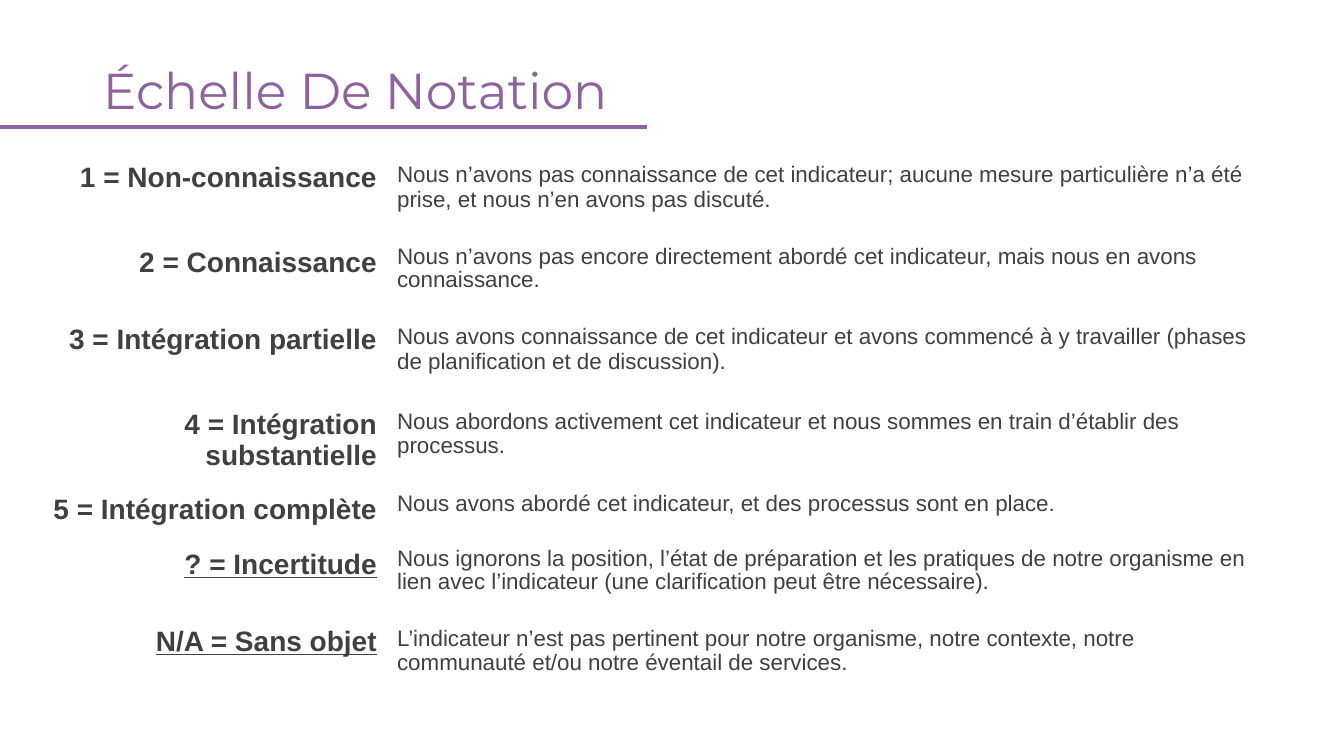
from lxml import etree
from pptx import Presentation
from pptx.dml.color import RGBColor
from pptx.enum.shapes import MSO_CONNECTOR as Connector
from pptx.enum.text import MSO_ANCHOR as Anchor, PP_ALIGN as Align
from pptx.oxml.ns import qn
from pptx.util import Pt

PX = 914400 / 100.8
COLOURS = {"purple": "8F629E", "text": "404040"}
SCALE = [
    (85, "1 = Non-connaissance", False, None,
     "Nous n’avons pas connaissance de cet indicateur; aucune mesure particulière n’a été prise, et nous n’en avons pas discuté."),
    (77, "2 = Connaissance", False, 0.9,
     "Nous n’avons pas encore directement abordé cet indicateur, mais nous en avons connaissance."),
    (85, "3 = Intégration partielle", False, None,
     "Nous avons connaissance de cet indicateur et avons commencé à y travailler (phases de planification et de discussion)."),
    (85, "4 = Intégration substantielle", False, None,
     "Nous abordons activement cet indicateur et nous sommes en train d’établir des processus."),
    (55, "5 = Intégration complète", False, 0.9,
     "Nous avons abordé cet indicateur, et des processus sont en place."),
    (77, "? = Incertitude", True, 0.9,
     "Nous ignorons la position, l’état de préparation et les pratiques de notre organisme en lien avec l’indicateur (une clarification peut être nécessaire)."),
    (85, "N/A = Sans objet", True, None,
     "L’indicateur n’est pas pertinent pour notre organisme, notre contexte, notre communauté et/ou notre éventail de services."),
]


def px(length):
    return round(length * PX)


class SlideBuilder:
    def __init__(self, slide):
        self.slide = slide

    def add_text(self, frame, text, size, colour="text", font="Arial",
                 bold=False, underline=False, align=Align.LEFT, spacing=None):
        paragraph = frame.paragraphs[0]
        paragraph.alignment = align
        if spacing:
            paragraph.line_spacing = spacing
        run = paragraph.add_run()
        run.text = text
        run.font.name = font
        run.font.size = Pt(size)
        run.font.bold = bold
        run.font.underline = underline
        run.font.color.rgb = RGBColor.from_string(COLOURS[colour])

    def title(self, text, *box):
        frame = self.slide.shapes.add_textbox(*map(px, box)).text_frame
        frame.word_wrap = True
        frame.vertical_anchor = Anchor.MIDDLE
        self.add_text(frame, text, 36, "purple", "Montserrat", spacing=0.9)

    def rule(self, left, right, y):
        rule = self.slide.shapes.add_connector(
            Connector.STRAIGHT, px(left), px(y), px(right), px(y))
        rule.line.color.rgb = RGBColor.from_string(COLOURS["purple"])
        rule.line.width = Pt(2.25)
        etree.SubElement(rule._element.spPr, qn("a:effectLst"))

    def rating_table(self, ratings, left, top, widths):
        total_height = sum(rating[0] for rating in ratings)
        table = self.slide.shapes.add_table(
            len(ratings), len(widths), px(left), px(top),
            px(sum(widths)), px(total_height)).table
        table.first_row = False
        table.horz_banding = False
        for column, width in zip(table.columns, widths):
            column.width = px(width)
        for row, (height, label, underlined, spacing, meaning) in zip(table.rows, ratings):
            row.height = px(height)
            label_cell, meaning_cell = row.cells
            for cell in row.cells:
                cell.fill.background()
            self.add_text(label_cell.text_frame, label, 20, bold=True,
                          underline=underlined, align=Align.RIGHT)
            self.add_text(meaning_cell.text_frame, meaning, 16, spacing=spacing)


def main():
    deck = Presentation()
    deck.slide_width, deck.slide_height = px(1344), px(756)
    builder = SlideBuilder(deck.slides.add_slide(deck.slide_layouts[6]))
    builder.title("Échelle De Notation", 93, 40, 1159, 106)
    builder.rating_table(SCALE, 19, 157, (368, 883))
    builder.rule(0, 647, 127)
    deck.save("out.pptx")


if __name__ == "__main__":
    main()
